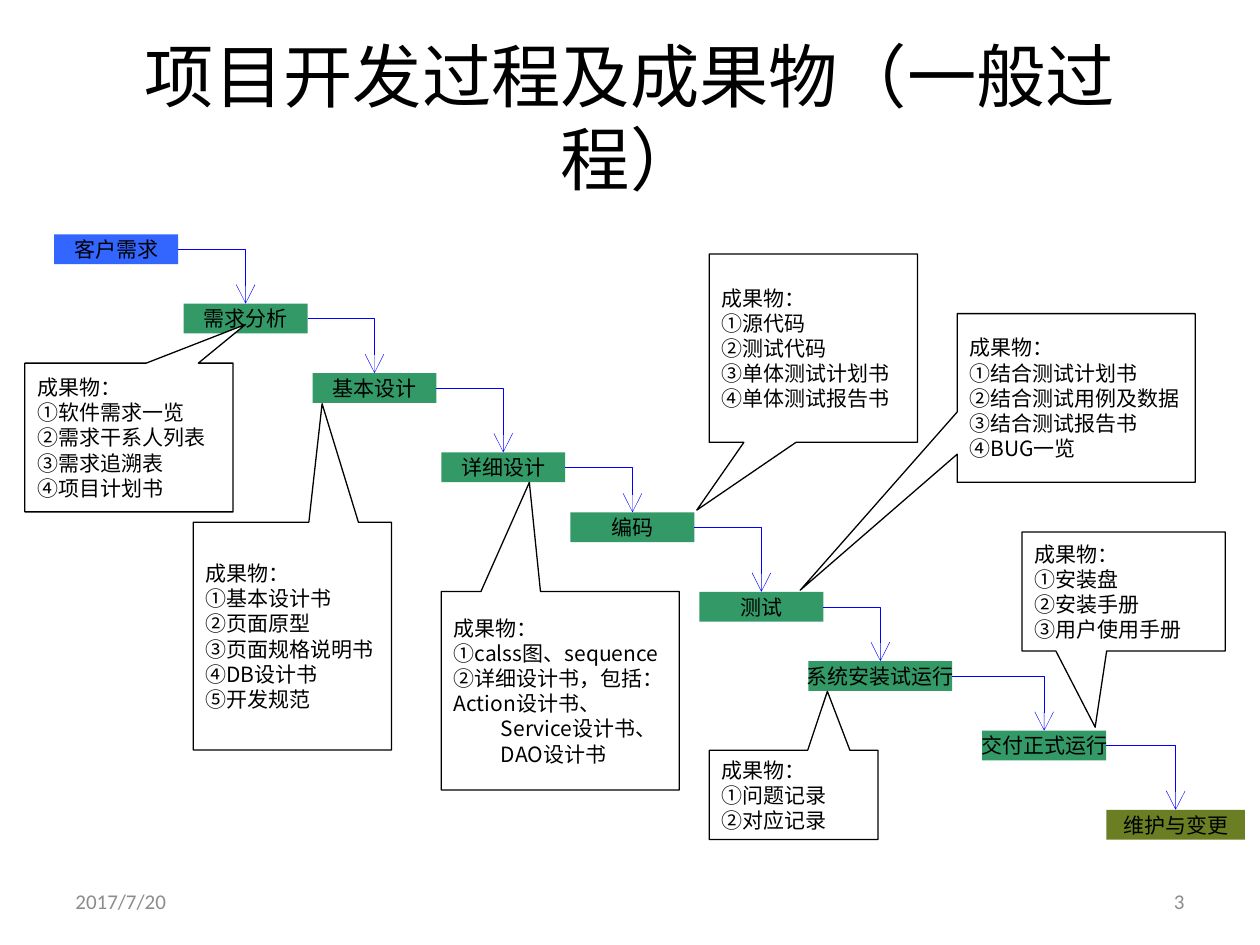
from lxml import etree
from pptx import Presentation
from pptx import util as u
from pptx.dml.color import RGBColor
from pptx.enum import shapes, text
from pptx.oxml.ns import qn

BLACK = RGBColor(0x00, 0x00, 0x00)
WHITE = RGBColor(0xFF, 0xFF, 0xFF)
GREY = RGBColor(0x8C, 0x8C, 0x8C)
BLUE = RGBColor(0x33, 0x66, 0xFF)
GREEN = RGBColor(0x33, 0x99, 0x66)
OLIVE = RGBColor(0x6B, 0x7E, 0x24)
ARROW_BLUE = RGBColor(0x00, 0x00, 0xFF)
TC, JP = "Noto Sans CJK TC", "Noto Sans CJK JP"
STEP_HEIGHT = 17

# Process steps: label, left, top, width, fill, font
STEPS = [
    ("客户需求", 31, 134, 70.8, BLUE, TC),
    ("需求分析", 105, 173.5, 70.8, GREEN, TC),
    ("基本设计", 178.6, 213.2, 70.8, GREEN, TC),
    ("详细设计", 252.2, 258.5, 70.8, GREEN, TC),
    ("编码", 326, 292.8, 70.8, GREEN, JP),
    ("测试", 399.7, 338.2, 70.8, GREEN, TC),
    ("系统安装试运行", 462, 377.8, 82.2, GREEN, TC),
    ("交付正式运行", 561.3, 417.5, 70.8, GREEN, TC),
    ("维护与变更", 632.2, 462.8, 79.2, OLIVE, TC),
]

# Deliverables: box, pointer offset as a share of the box, font, lines
CALLOUTS = [
    ((252.2, 338, 136, 113.4), (-0.13, -1.05), JP,
     ["①calss图、sequence", "②详细设计书，包括：",
      "Action设计书、Service设计书、DAO设计书"]),
    ((405.3, 145.2, 119, 107.6), (-0.56, 0.86), TC,
     ["①源代码", "②测试代码", "③单体测试计划书", "④单体测试报告书"]),
    ((547, 179.2, 136, 96.4), (-1.16, 1.14), TC,
     ["①结合测试计划书", "②结合测试用例及数据", "③结合测试报告书", "④BUG一览"]),
    ((14.2, 207.5, 119, 85), (0.56, -0.76), TC,
     ["①软件需求一览", "②需求干系人列表", "③需求追溯表", "④项目计划书"]),
    ((110.4, 298.4, 113.3, 130.2), (0.15, -1.02), TC,
     ["①基本设计书", "②页面原型", "③页面规格说明书", "④DB设计书", "⑤开发规范"]),
    ((405.3, 428.7, 96.5, 51), (0.2, -1.16), JP,
     ["①问题记录", "②对应记录"]),
    ((584, 304, 116.2, 68), (-0.14, 1.14), TC,
     ["①安装盘", "②安装手册", "③用户使用手册"]),
]


def points(*values):
    return [u.Pt(value) for value in values]


def format_paragraph(paragraph, size, color, font, align):
    paragraph.alignment = align
    paragraph.font.size = u.Pt(size)
    paragraph.font.color.rgb = color
    paragraph.font.name = font
    if font in (TC, JP):
        # The East Asian typeface has no public property
        latin = paragraph.font._element.find(qn("a:latin"))
        east_asian = etree.Element(qn("a:ea"), typeface=font)
        latin.addnext(east_asian)


def add_title(slide, label):
    title = slide.shapes.title
    title.left, title.top, title.width, title.height = points(36, 21.6, 648, 90)
    title.text_frame.text = label
    title.text_frame.vertical_anchor = text.MSO_ANCHOR.MIDDLE
    format_paragraph(title.text_frame.paragraphs[0], 39.6, BLACK, "Calibri",
                     text.PP_ALIGN.CENTER)


def add_filled_shape(slide, kind, box, fill):
    shape = slide.shapes.add_shape(kind, *points(*box))
    shape.shadow.inherit = False
    shape.fill.solid()
    shape.fill.fore_color.rgb = fill
    shape.text_frame.vertical_anchor = text.MSO_ANCHOR.MIDDLE
    return shape


def add_step(slide, label, left, top, width, fill, font):
    step = add_filled_shape(slide, shapes.MSO_SHAPE.RECTANGLE,
                            (left, top, width, STEP_HEIGHT), fill)
    step.line.fill.background()
    step.text_frame.word_wrap = False
    step.text_frame.text = label
    format_paragraph(step.text_frame.paragraphs[0], 12, BLACK, font,
                     text.PP_ALIGN.CENTER)
    return step


def add_step_arrow(slide, source, target):
    connector = slide.shapes.add_connector(shapes.MSO_CONNECTOR.ELBOW, 0, 0, 0, 0)
    connector.begin_connect(source, 3)
    connector.end_connect(target, 0)
    connector.line.color.rgb = ARROW_BLUE
    connector.line.width = u.Pt(0.25)
    # Single bend, open arrowhead, no shadow
    properties = connector._element.spPr
    properties.find(qn("a:prstGeom")).set("prst", "bentConnector2")
    etree.SubElement(properties.find(qn("a:ln")), qn("a:tailEnd"),
                     type="arrow", w="lg", len="lg")
    etree.SubElement(properties, qn("a:effectLst"))


def add_callout(slide, box, pointer, font, lines):
    callout = add_filled_shape(slide, shapes.MSO_SHAPE.RECTANGULAR_CALLOUT,
                               box, WHITE)
    callout.line.color.rgb = BLACK
    callout.line.width = u.Pt(0.75)
    callout.adjustments[0], callout.adjustments[1] = pointer
    frame = callout.text_frame
    frame.word_wrap = True
    frame.text = "\n".join(["成果物："] + lines)
    for paragraph in frame.paragraphs:
        format_paragraph(paragraph, 12, BLACK, font, text.PP_ALIGN.LEFT)
        # Hanging indent
        paragraph._p.get_or_add_pPr().set("marL", str(u.Pt(27)))
        paragraph._p.get_or_add_pPr().set("indent", str(u.Pt(-27)))


def add_footer(slide, label, left, align):
    box = slide.shapes.add_textbox(*points(left, 500.5, 168, 28.8))
    box.text_frame.word_wrap = True
    box.text_frame.vertical_anchor = text.MSO_ANCHOR.MIDDLE
    box.text_frame.text = label
    format_paragraph(box.text_frame.paragraphs[0], 12, GREY, "Calibri", align)


def main():
    presentation = Presentation()
    presentation.slide_width, presentation.slide_height = points(720, 540)
    slide = presentation.slides.add_slide(presentation.slide_layouts[5])
    add_title(slide, "项目开发过程及成果物（一般过程）")

    # Staircase of steps, each joined to the next
    steps = [add_step(slide, *step) for step in STEPS]
    for source, target in zip(steps, steps[1:]):
        add_step_arrow(slide, source, target)

    for callout in CALLOUTS:
        add_callout(slide, *callout)

    add_footer(slide, "2017/7/20", 36, text.PP_ALIGN.LEFT)
    add_footer(slide, "3", 516, text.PP_ALIGN.RIGHT)
    presentation.save("out.pptx")


if __name__ == "__main__":
    main()
